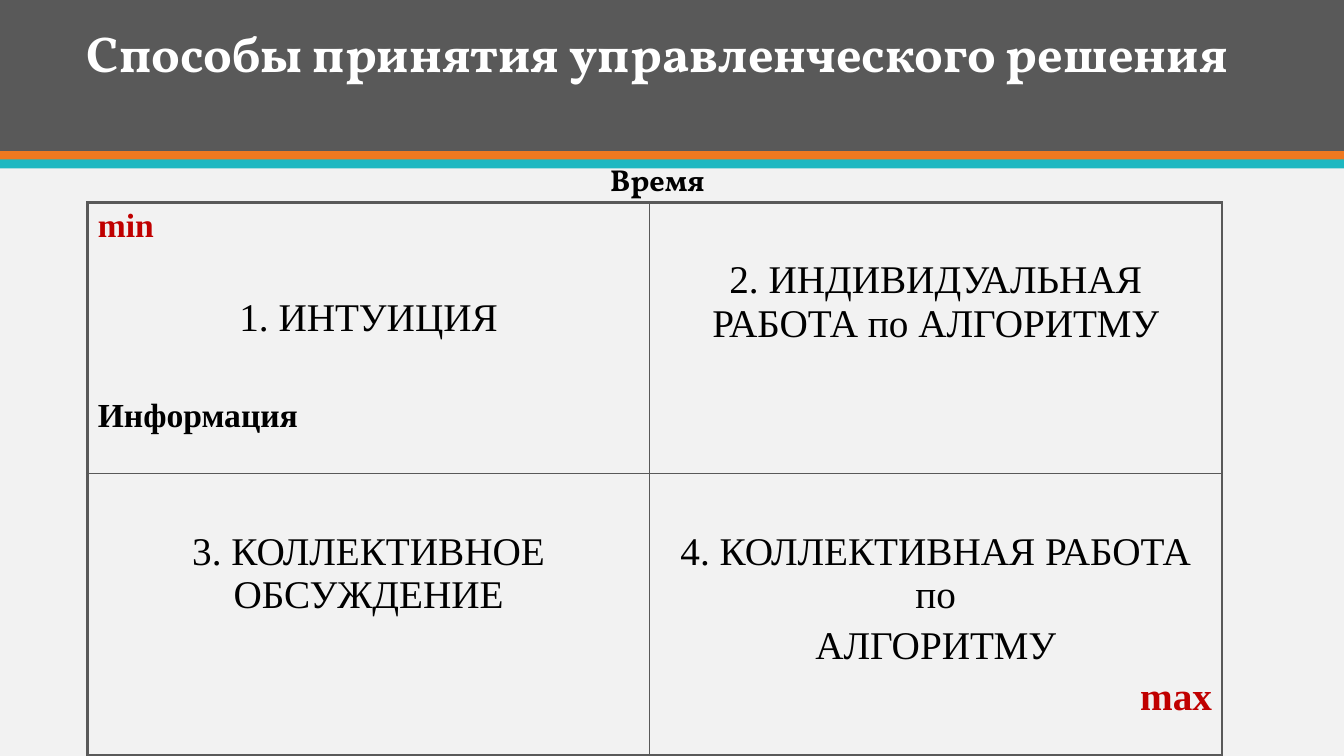
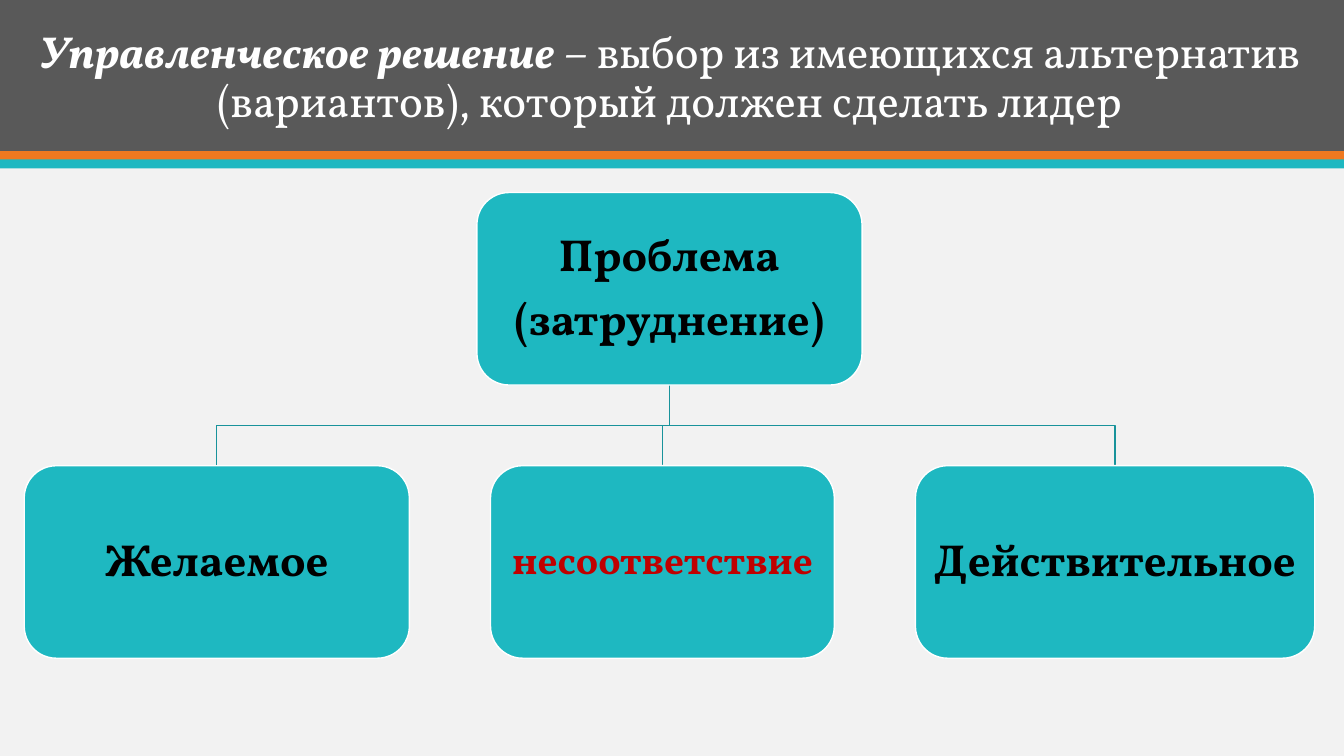
from lxml.etree import SubElement
from pptx import Presentation
from pptx.dml.color import RGBColor
from pptx.enum.shapes import MSO_SHAPE
from pptx.enum.text import MSO_ANCHOR, PP_ALIGN
from pptx.oxml.ns import qn
from pptx.util import Inches, Pt

COLORS = {
    "band": "595959", "orange": "EF7920", "teal": "1EB8C1", "branch": "18939B",
    "page": "F2F2F2", "white": "FFFFFF", "black": "000000", "red": "C00000",
}
HEADING_FONT = "Vollkorn"
TABLE_FONT = "Times New Roman"
SLIDE_WIDTH = 13.33


def color(name):
    return RGBColor.from_string(COLORS[name])


def add_run(paragraph, text, size, ink="black", bold=True, italic=False, face=HEADING_FONT):
    run = paragraph.add_run()
    run.text = text
    font = run.font
    font.name, font.size, font.bold, font.italic = face, Pt(size), bold, italic
    font.color.rgb = color(ink)


def paragraph_at(frame, index):
    return frame.paragraphs[0] if index == 0 else frame.add_paragraph()


def center_heading(frame, anchor):
    """Set up a wrapped, centred heading frame and return its first paragraph."""
    frame.word_wrap = True
    frame.vertical_anchor = anchor
    paragraph = frame.paragraphs[0]
    paragraph.alignment = PP_ALIGN.CENTER
    paragraph.line_spacing = 0.9
    return paragraph


def add_title_slide(prs, left, top, width, height):
    """Add a title-only slide; return it with its title paragraph."""
    slide = prs.slides.add_slide(prs.slide_layouts[5])
    title = slide.shapes.title
    title.left, title.top = Inches(left), Inches(top)
    title.width, title.height = Inches(width), Inches(height)
    return slide, center_heading(title.text_frame, MSO_ANCHOR.BOTTOM)


def move_bands_to_layout(slide):
    """Draw the header bands and place them in the layout that all slides share."""
    tree = slide.slide_layout.shapes.element
    bands = [(0, 1.5, "band"), (1.5, 0.09, "orange"), (1.58, 0.09, "teal")]
    for order, (top, height, fill) in enumerate(bands):
        band = slide.shapes.add_shape(
            MSO_SHAPE.RECTANGLE, 0, Inches(top), Inches(SLIDE_WIDTH), Inches(height))
        band.shadow.inherit = False
        band.fill.solid()
        band.fill.fore_color.rgb = color(fill)
        band.line.fill.background()
        tree.insert(2 + order, band.element)


# Decision table
def set_borders(cell, widths):
    properties = cell._tc.get_or_add_tcPr()
    for order, (side, width) in enumerate(zip("LRTB", widths)):
        border = SubElement(properties, qn(f"a:ln{side}"), w=str(Pt(width)))
        fill = SubElement(border, qn("a:solidFill"))
        SubElement(fill, qn("a:srgbClr"), val=COLORS["band"])
        properties.insert(order, border)


def fill_cell(cell, entries, margin_top):
    """Each entry is text, size, ink, bold, alignment, space before."""
    cell.margin_top = Inches(margin_top)
    for index, (text, size, ink, bold, alignment, before) in enumerate(entries):
        paragraph = paragraph_at(cell.text_frame, index)
        paragraph.alignment = alignment
        paragraph.space_before = Pt(before)
        add_run(paragraph, text, size, ink, bold, face=TABLE_FONT)


def add_methods_table(slide):
    def method(text, before=0):
        return (text, 28, "black", False, PP_ALIGN.CENTER, before)

    intuition = [
        ("min", 24, "red", True, PP_ALIGN.LEFT, 0),
        method("1. ИНТУИЦИЯ", 37),
        ("Информация", 24, "black", True, PP_ALIGN.LEFT, 41.4),
    ]
    individual = [method("2. ИНДИВИДУАЛЬНАЯ РАБОТА по АЛГОРИТМУ")]
    discussion = [method("3. КОЛЛЕКТИВНОЕ ОБСУЖДЕНИЕ")]
    collective = [
        method("4. КОЛЛЕКТИВНАЯ РАБОТА по"),
        method("АЛГОРИТМУ", 5.6),
        ("max", 28, "red", True, PP_ALIGN.RIGHT, 5.6),
    ]
    methods = [[intuition, individual], [discussion, collective]]

    table = slide.shapes.add_table(
        2, 2, Inches(0.87), Inches(2.01), Inches(11.25), Inches(5.48)).table
    table.first_row = table.horz_banding = False
    for column, width in zip(table.columns, (5.57, 5.68)):
        column.width = Inches(width)
    for row, height in zip(table.rows, (2.69, 2.79)):
        row.height = Inches(height)

    outer, inner = 2.25, 1
    for r, row_entries in enumerate(methods):
        for c, entries in enumerate(row_entries):
            cell = table.cell(r, c)
            cell.fill.background()
            sides = (c == 0, c == 1, r == 0, r == 1)
            set_borders(cell, [outer if edge else inner for edge in sides])
            fill_cell(cell, entries, 0.05 if entries is intuition else 0.56)


# Problem tree
def add_branch(slide, start, end):
    (x1, y1), (x2, y2) = start, end
    middle = (y1 + y2) / 2
    points = [(x1, middle), (x2, middle), (x2, y2)]
    builder = slide.shapes.build_freeform(Inches(x1), Inches(y1))
    builder.add_line_segments([(Inches(x), Inches(y)) for x, y in points], close=False)
    branch = builder.convert_to_shape()
    branch.shadow.inherit = False
    branch.fill.background()
    branch.line.color.rgb = color("branch")
    branch.line.width = Pt(1)


def add_node(slide, center, top, width, lines, size=32, ink="black",
             outline=MSO_SHAPE.FLOWCHART_ALTERNATE_PROCESS):
    node = slide.shapes.add_shape(
        outline, Inches(center - width / 2), Inches(top), Inches(width), Inches(1.91))
    node.shadow.inherit = False
    node.fill.solid()
    node.fill.fore_color.rgb = color("teal")
    node.line.color.rgb = color("white")
    node.line.width = Pt(1)
    frame = node.text_frame
    frame.word_wrap = True
    frame.vertical_anchor = MSO_ANCHOR.MIDDLE
    frame.margin_left = frame.margin_right = Inches(0.02)
    frame.margin_top = frame.margin_bottom = Inches(0.02)
    for index, line in enumerate(lines):
        paragraph = paragraph_at(frame, index)
        paragraph.alignment = PP_ALIGN.CENTER
        paragraph.line_spacing = 0.9
        paragraph.space_after = Pt(size * 0.35)
        add_run(paragraph, line, size, ink)


def add_problem_tree(slide):
    root_center, root_top, root_bottom, child_top = 6.64, 1.91, 3.82, 4.62
    children = [
        (2.15, 3.82, "Желаемое", {}),
        (6.57, 3.41, "несоответствие", {"size": 28, "ink": "red"}),
        (11.06, 3.96, "Действительное", {"outline": MSO_SHAPE.ROUNDED_RECTANGLE}),
    ]
    for center, *_ in children:
        add_branch(slide, (root_center, root_bottom), (center, child_top))
    add_node(slide, root_center, root_top, 3.82, ["Проблема", "(затруднение)"])
    for center, width, text, style in children:
        add_node(slide, center, child_top, width, [text], **style)


def main():
    prs = Presentation()
    prs.slide_width, prs.slide_height = Inches(SLIDE_WIDTH), Inches(7.5)
    background = prs.slide_master.background.fill
    background.solid()
    background.fore_color.rgb = color("page")

    # Ways of making a decision
    slide, title = add_title_slide(prs, 0.23, 0.1, 12.58, 0.78)
    move_bands_to_layout(slide)
    add_run(title, "Способы принятия управленческого решения", 36, "white")
    time_axis = slide.shapes.add_textbox(
        Inches(0.23), Inches(1.56), Inches(12.58), Inches(0.45))
    add_run(center_heading(time_axis.text_frame, MSO_ANCHOR.BOTTOM), "Время", 21.6)
    add_methods_table(slide)

    # What a decision is
    slide, title = add_title_slide(prs, 0.24, -0.14, 12.81, 1.45)
    add_run(title, "Управленческое решение", 32, "white", italic=True)
    add_run(title, " – выбор из имеющихся альтернатив (вариантов), "
                   "который должен сделать лидер", 32, "white", bold=False)
    add_problem_tree(slide)

    prs.save("out.pptx")


if __name__ == "__main__":
    main()
